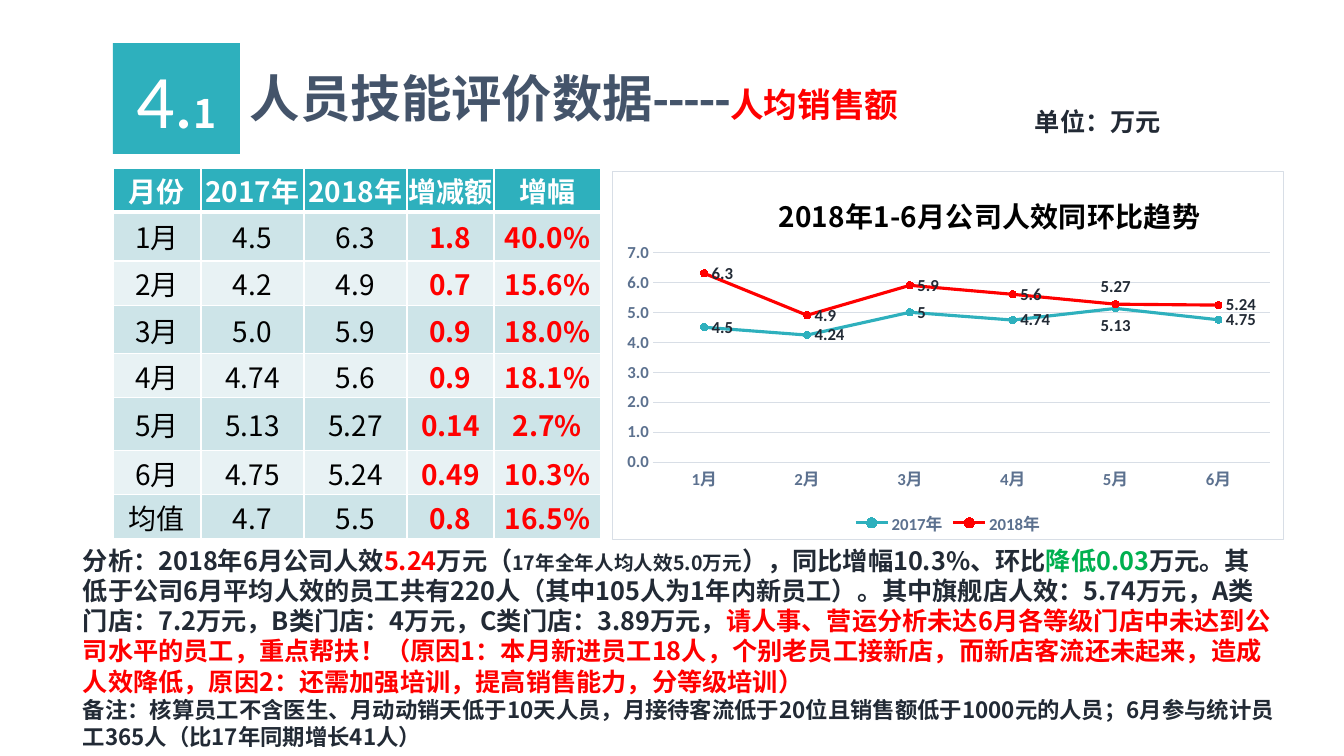
from lxml import etree
from pptx import Presentation, util as u
from pptx.chart.data import CategoryChartData
from pptx.dml.color import RGBColor
from pptx.enum import chart as ch, shapes, text
from pptx.oxml import parse_xml
from pptx.oxml.ns import nsdecls, qn

TEAL, RED, GREEN, INK = "2EB0BD", "FF0000", "00B050", "222A35"
WHITE, BLACK, SLATE, GRID, AXIS = "FFFFFF", "000000", "44546A", "D8DEE6", "5C718F"
BANDS = ("CDE4E8", "E8F2F4")
LATIN, HAN = "Calibri", "Noto Sans CJK SC"

MONTHS = [f"{n}月" for n in range(1, 7)]
SALES = {
    "2017年": ((4.5, 4.24, 5, 4.74, 5.13, 4.75), TEAL, ch.XL_LABEL_POSITION.BELOW),
    "2018年": ((6.3, 4.9, 5.9, 5.6, 5.27, 5.24), RED, ch.XL_LABEL_POSITION.ABOVE),
}
COMPARISON = [
    ("月份", "2017年", "2018年", "增减额", "增幅"),
    ("1月", "4.5", "6.3", "1.8", "40.0%"),
    ("2月", "4.2", "4.9", "0.7", "15.6%"),
    ("3月", "5.0", "5.9", "0.9", "18.0%"),
    ("4月", "4.74", "5.6", "0.9", "18.1%"),
    ("5月", "5.13", "5.27", "0.14", "2.7%"),
    ("6月", "4.75", "5.24", "0.49", "10.3%"),
    ("均值", "4.7", "5.5", "0.8", "16.5%"),
]
ANALYSIS = [
    [("分析：2018年6月公司人效", 18, INK), ("5.24", 18, RED), ("万元（", 18, INK),
     ("17年全年人均人效5.0万元", 14, INK), ("），同比增幅10.3%、环比", 18, INK),
     ("降低0.03", 18, GREEN),
     ("万元。其低于公司6月平均人效的员工共有220人（其中105人为1年内新员工）。"
      "其中旗舰店人效：5.74万元，A类门店：7.2万元，B类门店：4万元，C类门店：3.89万元，", 18, INK),
     ("请人事、营运分析未达6月各等级门店中未达到公司水平的员工，重点帮扶！"
      "（原因1：本月新进员工18人，个别老员工接新店，而新店客流还未起来，造成人效降低，"
      "原因2：还需加强培训，提高销售能力，分等级培训）", 18, RED)],
    [("备注：核算员工不含医生、月动动销天低于10天人员，月接待客流低于20位且销售额低于"
      "1000元的人员；6月参与统计员工365人（比17年同期增长41人）", 16, INK)],
]


def px(n):
    return round(n * 914400 / 100.8)


def rgb(code):
    return RGBColor.from_string(code)


def apply(target, **values):
    for name, value in values.items():
        setattr(target, name, value)


def style_font(font, size, color, bold=True, face=LATIN):
    apply(font, size=u.Pt(size), bold=bold, name=face)
    font.color.rgb = rgb(color)


def style_line(line, color, width):
    line.color.rgb = rgb(color)
    line.width = u.Pt(width)


def set_layout(parent, inner=False, **place):
    """Pin a chart part at fractions of the chart area."""
    for old in parent.findall(qn("c:layout")):
        parent.remove(old)
    layout = parse_xml(f"<c:layout {nsdecls('c')}><c:manualLayout/></c:layout>")
    modes = {"layoutTarget": "inner"} if inner else {}
    for tag, value in {**modes, "xMode": "edge", "yMode": "edge", **place}.items():
        etree.SubElement(layout[0], qn(f"c:{tag}")).set("val", str(value))
    before = parent.find(qn("c:tx"))
    if before is None:
        parent.insert(0, layout)
    else:
        before.addnext(layout)


class SlideBuilder:
    def __init__(self, slide):
        self.slide = slide

    def fill_text(self, frame, paragraphs, align=None, **frame_format):
        """Fill a frame; each run is (words, size, color[, bold[, face]])."""
        apply(frame, **frame_format)
        for index, runs in enumerate(paragraphs):
            paragraph = frame.add_paragraph() if index else frame.paragraphs[0]
            paragraph.alignment = align
            for words, size, color, *rest in runs:
                run = paragraph.add_run()
                run.text = words
                style_font(run.font, size, color, *rest)
                east_asian = etree.SubElement(run.font._element, qn("a:ea"))
                east_asian.set("typeface", HAN)

    def box(self, place, fill, runs):
        badge = self.slide.shapes.add_shape(shapes.MSO_SHAPE.RECTANGLE, *map(px, place))
        badge.shadow.inherit = False
        badge.fill.solid()
        badge.fill.fore_color.rgb = rgb(fill)
        badge.line.fill.background()
        self.fill_text(badge.text_frame, [runs], text.PP_ALIGN.CENTER,
                       vertical_anchor=text.MSO_ANCHOR.MIDDLE)

    def label(self, place, paragraphs):
        frame = self.slide.shapes.add_textbox(*map(px, place)).text_frame
        self.fill_text(frame, paragraphs, word_wrap=True,
                       auto_size=text.MSO_AUTO_SIZE.SHAPE_TO_FIT_TEXT)

    def border(self, cell, bottom):
        for index, side in enumerate("LRTB"):
            width = u.Pt(bottom if side == "B" else 1)
            edge = parse_xml(
                f'<a:ln{side} {nsdecls("a")} w="{width}"><a:solidFill>'
                f'<a:srgbClr val="{WHITE}"/></a:solidFill></a:ln{side}>')
            cell._tc.get_or_add_tcPr().insert(index, edge)

    def table(self, left, top, widths, heights, rows):
        place = map(px, (left, top, sum(widths), sum(heights)))
        grid = self.slide.shapes.add_table(len(rows), len(widths), *place).table
        for column, width in zip(grid.columns, widths):
            column.width = px(width)
        for r, (row, height) in enumerate(zip(rows, heights)):
            grid.rows[r].height = px(height)
            for c, words in enumerate(row):
                cell = grid.cell(r, c)
                apply(cell, margin_left=0, margin_right=0, margin_top=0, margin_bottom=0,
                      vertical_anchor=text.MSO_ANCHOR.MIDDLE)
                cell.fill.solid()
                cell.fill.fore_color.rgb = rgb(BANDS[(r - 1) % 2] if r else TEAL)
                color = WHITE if r == 0 else RED if c > 2 else BLACK
                bold = r == 0 or c > 2
                self.fill_text(cell.text_frame, [[(words, 20, color, bold, HAN)]],
                               text.PP_ALIGN.CENTER)
                self.border(cell, 1 if r else 3)

    def line_chart(self, place, title, categories, series):
        data = CategoryChartData(number_format="General")
        data.categories = categories
        for name, (values, *_) in series.items():
            data.add_series(name, values)
        chart = self.slide.shapes.add_chart(
            ch.XL_CHART_TYPE.LINE_MARKERS, *map(px, place), data).chart
        style_font(chart.font, 10, INK, False)
        self.fill_text(chart.chart_title.text_frame, [[(title, 20, BLACK, True, HAN)]])
        apply(chart, has_legend=True)
        apply(chart.legend, position=ch.XL_LEGEND_POSITION.BOTTOM, include_in_layout=False)
        style_font(chart.legend.font, 12, AXIS)

        for axis in (chart.category_axis, chart.value_axis):
            apply(axis, major_tick_mark=ch.XL_TICK_MARK.NONE,
                  minor_tick_mark=ch.XL_TICK_MARK.NONE)
            style_font(axis.tick_labels.font, 12, AXIS)
        style_line(chart.category_axis.format.line, GRID, 0.75)
        apply(chart.value_axis, minimum_scale=0, maximum_scale=7, major_unit=1)
        chart.value_axis.format.line.fill.background()
        style_line(chart.value_axis.major_gridlines.format.line, GRID, 0.75)
        apply(chart.value_axis.tick_labels, number_format="0.0", number_format_is_linked=False)

        for plotted, (_, color, may_side) in zip(chart.plots[0].series, series.values()):
            plotted.smooth = False
            style_line(plotted.format.line, color, 2.25)
            apply(plotted.marker, style=ch.XL_MARKER_STYLE.CIRCLE, size=5)
            plotted.marker.format.fill.solid()
            plotted.marker.format.fill.fore_color.rgb = rgb(color)
            style_line(plotted.marker.format.line, color, 0.75)
            apply(plotted.data_labels, show_value=True, position=ch.XL_LABEL_POSITION.RIGHT)
            style_font(plotted.data_labels.font, 12, INK)
            may = plotted.points[4].data_label
            style_font(may.font, 12, INK)
            may.position = may_side

        root = chart._chartSpace
        set_layout(root.chart.find(qn("c:title")), x=0.24, y=0.04)
        set_layout(root.chart.plotArea, inner=True, x=0.06, y=0.22, w=0.92, h=0.57)
        root.chart.addnext(parse_xml(
            f'<c:spPr {nsdecls("c", "a")}><a:solidFill><a:srgbClr val="{WHITE}"/></a:solidFill>'
            f'<a:ln w="{u.Pt(0.75)}"><a:solidFill><a:srgbClr val="{GRID}"/></a:solidFill>'
            '</a:ln></c:spPr>'))


def main():
    deck = Presentation()
    apply(deck, slide_width=px(1344), slide_height=px(756))
    page = SlideBuilder(deck.slides.add_slide(deck.slide_layouts[6]))
    page.box((113, 43, 127, 111), TEAL, [("4.", 54, WHITE, False), ("1", 28, WHITE, True, HAN)])
    page.label((240, 62, 940, 72), [[("人员技能评价数据-----", 36, SLATE), ("人均销售额", 24, RED)]])
    page.label((1025, 101, 155, 40), [[("单位：万元", 18, INK)]])
    page.label((73, 540, 1212, 217),
               [[(*run, True, HAN) for run in runs] for runs in ANALYSIS])
    page.table(113, 168, (88, 103, 103, 87, 107), (44, 49, 45, 48, 44, 53, 44, 44), COMPARISON)
    page.line_chart((612, 171, 672, 369), "2018年1-6月公司人效同环比趋势", MONTHS, SALES)
    deck.save("out.pptx")


if __name__ == "__main__":
    main()
